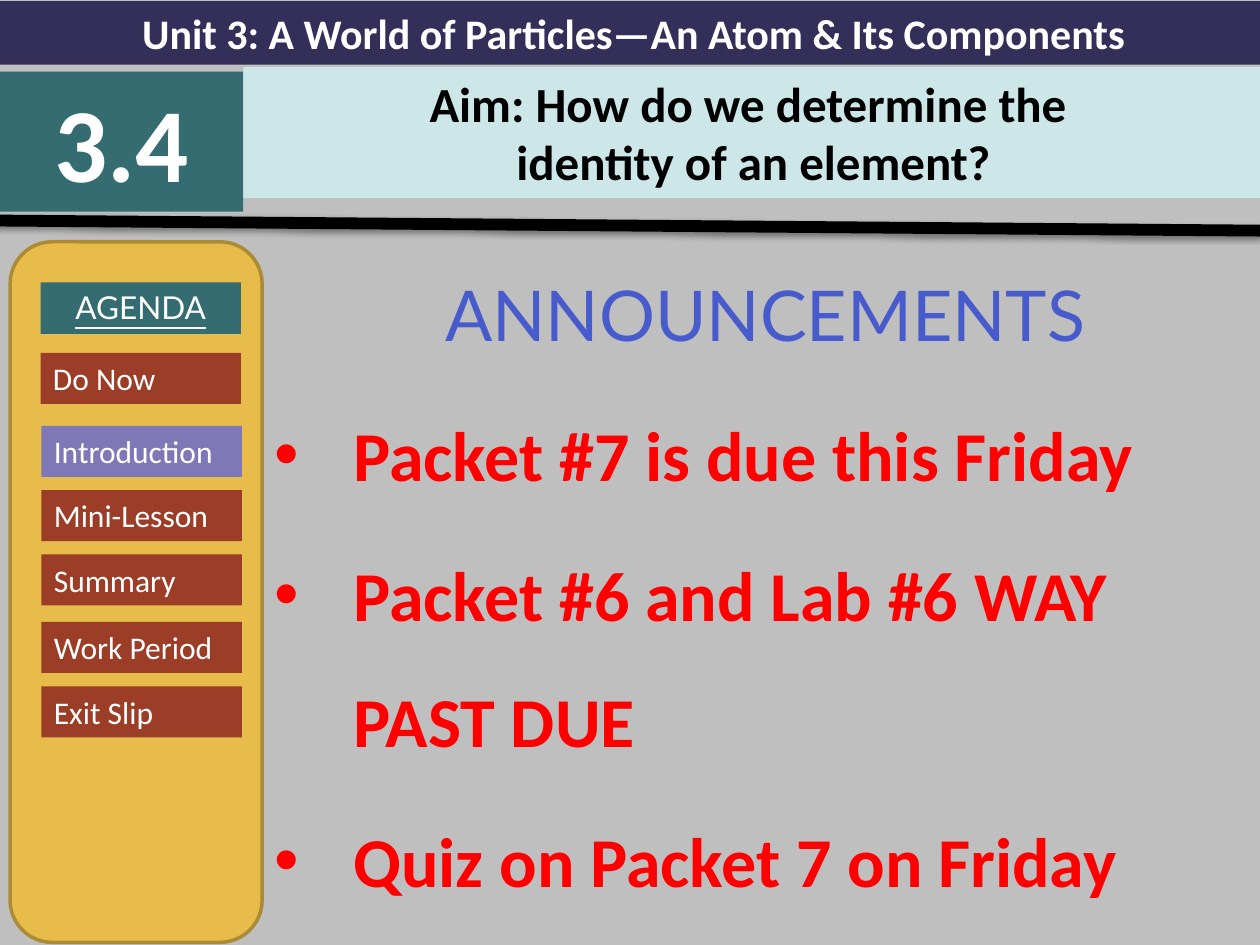
from lxml import etree
from pptx import Presentation
from pptx.dml.color import RGBColor
from pptx.enum import shapes, text
from pptx.oxml import parse_xml
from pptx.oxml.ns import nsdecls, qn
from pptx.util import Pt

GREY = RGBColor(0xBF, 0xBF, 0xBF)
NAVY = RGBColor(0x34, 0x2F, 0x59)
TEAL = RGBColor(0x34, 0x6C, 0x71)
PALE = RGBColor(0xCD, 0xE6, 0xE8)
GOLD = RGBColor(0xE8, 0xBC, 0x4A)
EDGE = RGBColor(0xAC, 0x8B, 0x37)
RUST = RGBColor(0x9C, 0x3D, 0x28)
LILAC = RGBColor(0x7E, 0x78, 0xB7)
BLUE = RGBColor(0x47, 0x5B, 0xCD)
RED = RGBColor(0xFF, 0, 0)
WHITE = RGBColor(0xFF, 0xFF, 0xFF)
BLACK = RGBColor(0, 0, 0)
RECT = shapes.MSO_SHAPE.RECTANGLE
LEFT, MID = text.PP_ALIGN.LEFT, text.PP_ALIGN.CENTER


def write(par, words, color, **form):
    run = par.add_run()
    run.text = words
    run.font.color.rgb = color
    for key, val in form.items():
        setattr(run.font, key, val)


def panel(home, place, fill, lines, color, align, **form):
    box = home.add_shape(RECT, *[Pt(n) for n in place])
    box.shadow.inherit = False
    box.fill.solid()
    box.fill.fore_color.rgb = fill
    box.line.fill.background()
    frame = box.text_frame
    frame.word_wrap = True
    frame.auto_size = text.MSO_AUTO_SIZE.SHAPE_TO_FIT_TEXT
    frame.vertical_anchor = text.MSO_ANCHOR.TOP
    for i, words in enumerate(lines):
        par = frame.add_paragraph() if i else frame.paragraphs[0]
        par.alignment = align
        write(par, words, color, **form)


deck = Presentation()
deck.slide_width, deck.slide_height = Pt(720), Pt(540)
slide = deck.slides.add_slide(deck.slide_layouts[6])
slide.background.fill.solid()
slide.background.fill.fore_color.rgb = GREY
items = slide.shapes

# Announcements
news = items.add_textbox(Pt(149.8), Pt(146.9), Pt(574.6), Pt(393.1)).text_frame
news.word_wrap = True
head = news.paragraphs[0]
head.alignment = MID
head.line_spacing = 1.1
head.space_before = Pt(8)
write(head, "ANNOUNCEMENTS", BLUE, size=Pt(40), name="Lato")
for words in ("Packet #7 is due this Friday",
              "Packet #6 and Lab #6 WAY PAST DUE",
              "Quiz on Packet 7 on Friday"):
    par = news.add_paragraph()
    par.line_spacing = 1.5
    par.space_before = Pt(8)
    write(par, words, RED, size=Pt(40), name="Calibri", bold=True)
    props = par._p.get_or_add_pPr()
    props.set("marL", str(Pt(45)))
    props.set("indent", str(Pt(-45)))
    etree.SubElement(props, qn("a:buFont")).set("typeface", "Arial")
    etree.SubElement(props, qn("a:buChar")).set("char", "•")

# Header: unit, lesson number, aim
for place, fill, lines, color, size in (
        ((0, 0.7, 724.3, 36.3), NAVY,
         ["Unit 3: A World of Particles—An Atom & Its Components"], WHITE, 24),
        ((0, 41, 139, 80), TEAL, ["3.4"], WHITE, 60),
        ((139, 38.2, 583, 75.1), PALE,
         ["Aim: How do we determine the ", "identity of an element?"], BLACK, 28)):
    panel(items, place, fill, lines, color, MID,
          size=Pt(size), name="Calibri", bold=True)

# Rule below the header, with a soft shadow
rule = items.add_connector(shapes.MSO_CONNECTOR.STRAIGHT,
                           Pt(-3.6), Pt(126), Pt(720), Pt(131.8))
rule.line.color.rgb = BLACK
rule.line.width = Pt(6.75)
rule._element.spPr.append(parse_xml(
    f'<a:effectLst {nsdecls("a")}><a:outerShdw blurRad="{Pt(3.1)}" '
    f'dist="{Pt(1.6)}" dir="5400000" rotWithShape="0"><a:srgbClr val="000000">'
    '<a:alpha val="38000"/></a:srgbClr></a:outerShdw></a:effectLst>'))

# Agenda sidebar
side = items.add_group_shape().shapes
card = side.add_shape(shapes.MSO_SHAPE.ROUNDED_RECTANGLE,
                      Pt(5.8), Pt(138.2), Pt(144), Pt(400.3))
card.shadow.inherit = False
card.fill.solid()
card.fill.fore_color.rgb = GOLD
card.line.color.rgb = EDGE
card.line.width = Pt(2)
panel(side, (23.2, 161.3, 114.5, 29.5), TEAL, ["AGENDA"], WHITE, MID,
      size=Pt(18), name="Lato", underline=True)
for words, left, top, fill in (("Do Now", 23.2, 201.6, RUST),
                               ("Introduction", 23.7, 243.4, LILAC),
                               ("Mini-Lesson", 23.7, 280.1, RUST),
                               ("Summary", 23.7, 316.8, RUST),
                               ("Work Period", 23.7, 355.4, RUST),
                               ("Exit Slip", 23.7, 392.2, RUST)):
    panel(side, (left, top, 114.5, 29.2), fill, [words], WHITE, LEFT,
          size=Pt(18), name="Calibri")

deck.save("out.pptx")
